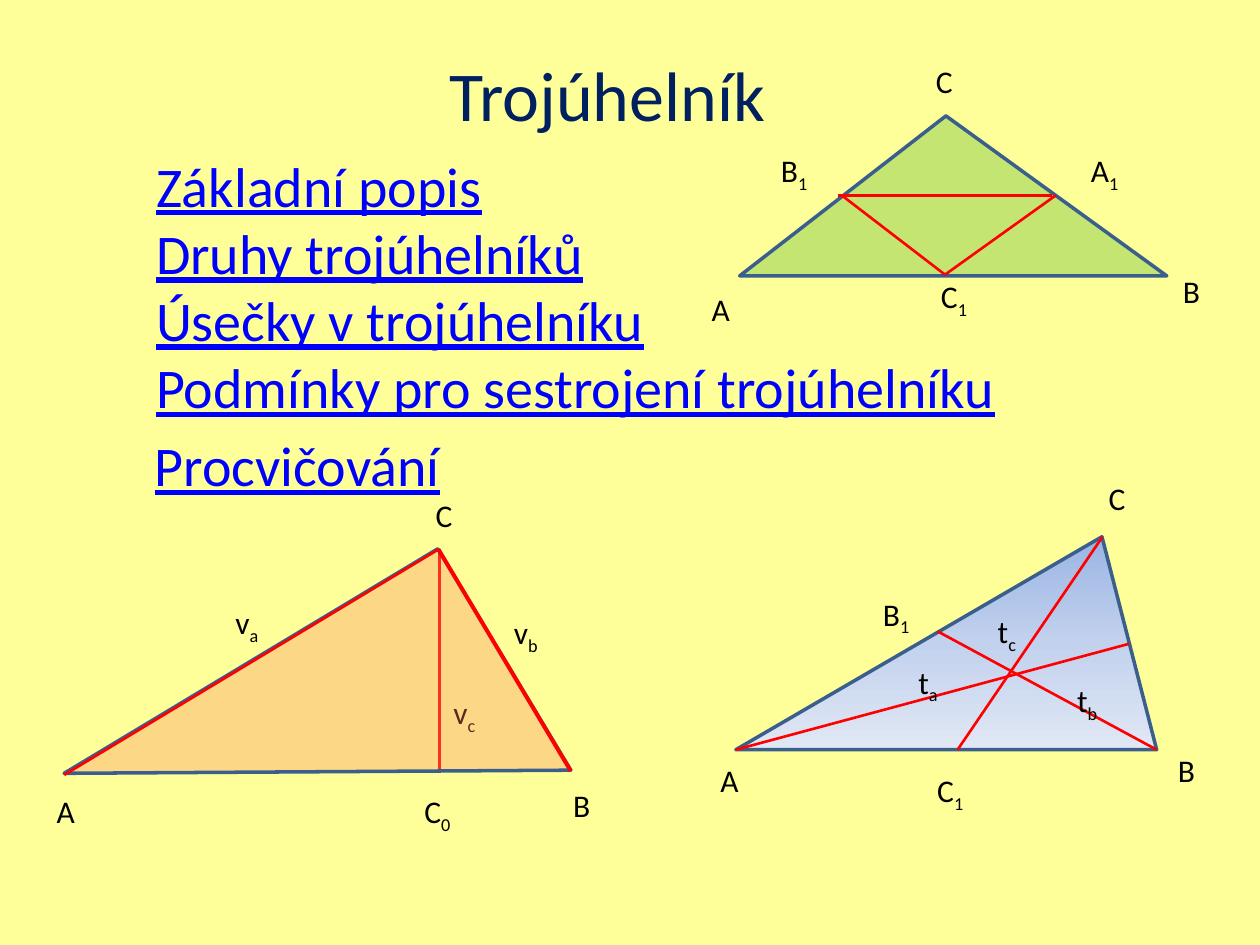
from copy import deepcopy

from pptx import Presentation
from pptx.dml.color import RGBColor as Rgb
from pptx.enum.shapes import MSO_CONNECTOR as Link, MSO_SHAPE as Preset
from pptx.enum.text import PP_ALIGN as Align
from pptx.oxml.ns import qn
from pptx.oxml.xmlchemy import OxmlElement as Element
from pptx.util import Inches, Pt

COLORS = {
    "paper": "FFFF99", "title": "002060", "link": "0000FF", "label": "000000",
    "edge": "3A5F8C", "segment": "FF0000", "green": "92D050", "orange": "F98C61",
    "sky": "9AB5E4", "haze": "C2D1ED", "mist": "E1E8F5",
}


class TriangleSlide:
    """Draws on one slide over a grid of 100 columns by 75 rows."""

    font = "Calibri"
    columns, rows = 100, 75

    def __init__(self, deck):
        deck.slide_width, deck.slide_height = Inches(10), Inches(7.5)
        self.column = deck.slide_width / self.columns
        self.row = deck.slide_height / self.rows
        self.slide = deck.slides.add_slide(deck.slide_layouts[6])
        backdrop = self.slide.background.fill
        backdrop.solid()
        backdrop.fore_color.rgb = self.color("paper")

    def color(self, name):
        return Rgb.from_string(COLORS[name])

    def place(self, *lengths):
        units = (self.column, self.row) * 2
        return [round(length * unit) for length, unit in zip(lengths, units)]

    def text(self, lines, box, size, color, align=Align.LEFT, wrap=True, underline=False):
        frame = self.slide.shapes.add_textbox(*self.place(*box)).text_frame
        frame.word_wrap = wrap
        frame.text = "\n".join(lines)
        for paragraph in frame.paragraphs:
            paragraph.alignment = align
            font = paragraph.font
            font.name, font.size, font.underline = self.font, Pt(size), underline
            font.color.rgb = self.color(color)
            for run in paragraph.runs:
                run.font.underline = underline
                if underline:
                    run.font.color.rgb = self.color(color)
        return frame

    def links(self, lines, box):
        self.text(lines, box, 32, "link", wrap=False, underline=True)

    def label(self, name, left, top, width):
        frame = self.text([name[0]], (left, top, width, 4), 18, "label")
        if name[1:]:
            index = frame.paragraphs[0].add_run()
            index.text = name[1:]
            index._r.get_or_add_rPr().set("baseline", "-25000")

    def labels(self, *entries):
        for entry in entries:
            self.label(*entry)

    def triangle(self, box, preset=Preset.ISOSCELES_TRIANGLE, apex=None, rotation=0):
        shape = self.slide.shapes.add_shape(preset, *self.place(*box))
        shape.shadow.inherit = False
        shape.rotation = rotation
        if apex is not None:
            shape.adjustments[0] = apex
        shape.line.color.rgb = self.color("edge")
        shape.line.width = Pt(2)
        return shape

    def tint(self, shape, color, opacity):
        shape.fill.solid()
        shape.fill.fore_color.rgb = self.color(color)
        alpha = Element("a:alpha")
        alpha.set("val", str(opacity * 1000))
        next(shape._element.spPr.iter(qn("a:srgbClr"))).append(alpha)

    def fade(self, shape, names):
        shape.fill.gradient()
        shape.fill.gradient_angle = 270
        stops = next(shape._element.spPr.iter(qn("a:gsLst")))
        while len(stops) < len(names):
            stops.append(deepcopy(stops[0]))
        for order, (stop, name) in enumerate(zip(shape.fill.gradient_stops, names)):
            stop.color.rgb = self.color(name)
            stop.position = order / (len(names) - 1)

    def segment(self, start, end, width=1.5):
        ends = self.place(*start, *end)
        line = self.slide.shapes.add_connector(Link.STRAIGHT, *ends)
        line.line.color.rgb = self.color("segment")
        line.line.width = Pt(width)
        line._element.spPr.append(Element("a:effectLst"))


def draw_medians(page):
    """Draws the triangle with its three medians."""
    a, b, c = (58.4, 59.5), (91.8, 59.5), (87.5, 42.6)
    page.fade(page.triangle((58.4, 42.6, 33.4, 16.9), apex=0.87), ("sky", "haze", "mist"))
    for start, end in (((74.4, 50.1), b), ((89.6, 51.1), a), (c, (76, 59.5))):
        page.segment(start, end)
    page.labels(
        ("A", 56.2, 59.9, 3.3), ("ta", 71.9, 52.1, 3.9), ("tb", 84.5, 53.6, 4.2),
        ("tc", 78.2, 48.1, 3.9), ("C1", 73.4, 60.7, 4.6), ("B1", 69.1, 46.7, 4.6),
        ("B", 92.5, 59.1, 3.4), ("C", 87, 37.5, 3.4),
    )


def draw_midlines(page):
    """Draws the triangle with its three midlines."""
    foot = (75, 21.8)
    page.tint(page.triangle((58.7, 9.2, 33.9, 12.7), apex=0.483), "green", 54)
    for start, end in (((66.5, 15.5), (83.5, 15.5)), ((66.8, 15.5), foot), (foot, (83.8, 15.5))):
        page.segment(start, end)
    page.labels(
        ("B", 92.9, 21.1, 2.1), ("C", 73.3, 4.4, 2.1), ("B1", 61, 11.5, 4.6),
        ("A1", 85.6, 11.5, 5.3), ("C1", 73.7, 21.5, 5), ("A", 55.5, 22.5, 3.1),
    )


def draw_altitudes(page):
    """Draws the right triangle with its three altitudes."""
    page.segment((34.9, 43.8), (34.9, 61.1))
    page.labels(
        ("A", 3.5, 62.4, 3.1), ("C", 33.6, 38.9, 3.4), ("C0", 32.7, 62.4, 4.6),
        ("vb", 39.8, 48.2, 4.7), ("va", 17.7, 47.4, 4.7), ("vc", 35, 54.5, 4.7),
        ("B", 44.5, 61.9, 3.4),
    )
    right = page.triangle((7.9, 51, 34.6, 20.5), Preset.RIGHT_TRIANGLE, rotation=149)
    page.tint(right, "orange", 34)
    page.segment((34.8, 43.6), (5.1, 61.5))
    page.segment((45.3, 61.2), (34.8, 43.6), 2.25)


def main():
    """Builds and saves the deck."""
    deck = Presentation()
    page = TriangleSlide(deck)
    page.text(["Trojúhelník"], (23.2, 3.6, 50, 13.1), 40, "title", Align.CENTER)
    page.links(
        ["Základní popis", "Druhy trojúhelníků", "Úsečky v trojúhelníku",
         "Podmínky pro sestrojení trojúhelníku"],
        (11.4, 11.5, 69.2, 22.6),
    )
    draw_altitudes(page)
    draw_medians(page)
    draw_midlines(page)
    page.links(["Procvičování"], (11.3, 33.7, 24.9, 6.4))
    deck.save("out.pptx")


if __name__ == "__main__":
    main()
